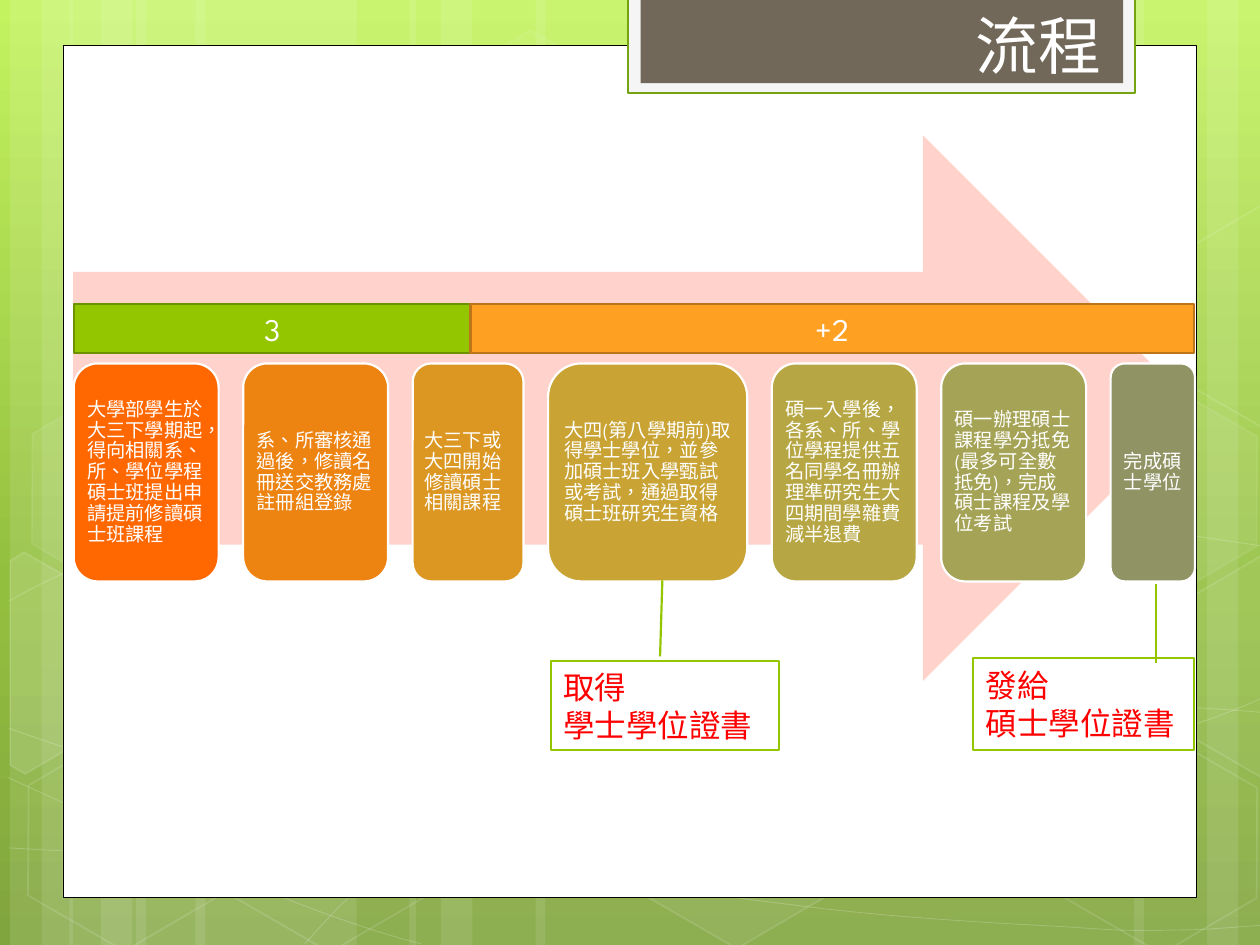
from math import cos, radians, sin

from lxml.etree import SubElement
from pptx import Presentation
from pptx.dml.color import RGBColor
from pptx.enum.lang import MSO_LANGUAGE_ID
from pptx.enum.shapes import MSO_SHAPE
from pptx.enum.text import MSO_ANCHOR, MSO_AUTO_SIZE, PP_ALIGN
from pptx.oxml.ns import qn
from pptx.util import Inches, Pt

COLORS = {
    "sky": "C3F35F", "grass": "93BF3F", "moss": "81A53E",
    "white": "FFFFFF", "black": "000000", "red": "FF0000",
    "frame": "F5F5F5", "frame_edge": "74A510", "tab": "71685A",
    "arrow": "FFD3CC", "green": "94C600", "green_edge": "6D9200",
    "amber": "FEA022", "amber_edge": "BC7619",
    "step1": "FF6700", "step2": "ED8311", "step3": "DB9722", "step4": "C9A333",
    "step5": "B7A744", "step6": "A5A355", "step7": "909465",
}
COLUMNS, ROWS = 100, 75  # grid cells across and down the page
TILT = 30  # degrees the hexagons and shards are turned


class SlideBuilder:
    def __init__(self, deck):
        self.width, self.height = deck.slide_width, deck.slide_height
        self.page = deck.slides.add_slide(deck.slide_layouts[5])

    def cells(self, *lengths):
        """Turn alternating columns and rows into slide lengths."""
        units = (self.width / COLUMNS, self.height / ROWS)
        return [round(length * units[i % 2]) for i, length in enumerate(lengths)]

    def background(self, stops):
        fill = self.page.background.fill
        fill.gradient()
        fill.gradient_angle = 270
        stop_list = self.page.element.find(".//" + qn("a:gsLst"))
        for stop in list(stop_list):
            stop_list.remove(stop)
        for percent, color in stops:
            stop = SubElement(stop_list, qn("a:gs"), pos=str(percent * 1000))
            SubElement(stop, qn("a:srgbClr"), val=COLORS[color])

    def style(self, shape, fill=None, line=None, weight=1.25, fill_alpha=100, line_alpha=100):
        shape.shadow.inherit = False
        properties = shape.element.spPr
        parts = ((shape.fill, fill, fill_alpha, "a:solidFill"),
                 (shape.line.fill, line, line_alpha, "a:ln/a:solidFill"))
        for paint, color, alpha, tags in parts:
            if color is None:
                paint.background()
                continue
            paint.solid()
            paint.fore_color.rgb = RGBColor.from_string(COLORS[color])
            if alpha < 100:
                node = properties.find("/".join(qn(tag) for tag in tags.split("/")))
                SubElement(node[0], qn("a:alpha"), val=str(alpha * 1000))
        if line:
            shape.line.width = Pt(weight)

    def shape(self, kind, place, adjust=(), rotation=0, **look):
        shape = self.page.shapes.add_shape(kind, *self.cells(*place))
        for index, value in enumerate(adjust):
            shape.adjustments[index] = value
        shape.rotation = rotation
        self.style(shape, **look)
        return shape

    def outline(self, points, close, **look):
        spots = [self.cells(*point) for point in points]
        builder = self.page.shapes.build_freeform(*spots[0])
        builder.add_line_segments(spots[1:], close=close)
        shape = builder.convert_to_shape()
        self.style(shape, **look)
        return shape

    def curve(self, points, **look):
        """Draw chained cubic curves: a start, then three points for each."""
        shape = self.outline(points, False, **look)
        route = shape.element.find(".//" + qn("a:pathLst"))[0]
        segments = route.findall(qn("a:lnTo"))
        for first in range(0, len(segments), 3):
            bend = SubElement(route, qn("a:cubicBezTo"))
            for segment in segments[first:first + 3]:
                bend.append(segment[0])
                route.remove(segment)

    def shard(self, points, center, **look):
        """Draw a tilted polygon from the corners it shows on the slide."""
        cosine, sine = cos(radians(TILT)), sin(radians(TILT))
        (middle_x, middle_y), upright = center, []
        for x, y in points:
            dx, dy = x - middle_x, y - middle_y
            upright.append((middle_x + dx * cosine + dy * sine,
                            middle_y + dy * cosine - dx * sine))
        self.outline(upright, True, **look).rotation = TILT

    def text(self, shape, paragraphs, size, color="white", font="League Spartan",
             frame_format=None, para_format=None):
        frame = shape.text_frame
        frame_values = {"word_wrap": True, "vertical_anchor": MSO_ANCHOR.MIDDLE}
        for name, value in (frame_values | (frame_format or {})).items():
            setattr(frame, name, value)
        para_values = {"alignment": PP_ALIGN.LEFT} | (para_format or {})
        font_values = {"size": Pt(size), "name": font,
                       "language_id": MSO_LANGUAGE_ID.TRADITIONAL_CHINESE}
        for index, words in enumerate(paragraphs):
            para = frame.add_paragraph() if index else frame.paragraphs[0]
            for name, value in para_values.items():
                setattr(para, name, value)
            span = para.add_run()
            span.text = words
            for name, value in font_values.items():
                setattr(span.font, name, value)
            span.font.color.rgb = RGBColor.from_string(COLORS[color])

    def title(self, words, place):
        box = self.page.shapes.title
        self.page.shapes._spTree.append(box.element)  # bring in front of the tab
        box.left, box.top, box.width, box.height = self.cells(*place)
        self.text(box, [words], 36, font="Arial", frame_format={
            "word_wrap": False, "vertical_anchor": MSO_ANCHOR.TOP,
            "auto_size": MSO_AUTO_SIZE.SHAPE_TO_FIT_TEXT})


STREAKS = [(10.8, 17.5), (0.8, 5), (3.3, 8.3), (15.5, 17.5), (5.5, 5), (8, 8.3),
           (73.3, 17.5), (95.8, 5), (90, 8.3), (42.5, 30.8), (32.5, 5), (35, 8.3)]
CURVES = [
    [(.7, 67.3), (6.1, 67.6), (11.5, 67.9), (19, 67.8), (26.5, 67.7), (35.8, 67.5), (45.8, 66.5),
     (55.8, 65.5), (70, 63.6), (79.2, 61.7), (88.3, 59.8), (97.7, 56.8), (100.7, 55.1)],
    [(.7, 47.7), (3.6, 46.1), (6.5, 44.6), (12.1, 43.1), (17.8, 41.6), (25.9, 39.4), (34.7, 38.7),
     (43.6, 38), (54.4, 37.9), (65.4, 38.7), (76.4, 39.5), (94.7, 42.6), (100.7, 43.4)],
    [(.6, 61.7), (12.7, 67.2), (24.7, 72.7), (33.4, 74.9)],
    [(.7, 57.8), (3.8, 58.9), (7, 60), (12.8, 61.6), (18.6, 63.1), (27.3, 65.6), (35.7, 67.3),
     (44, 69), (54.5, 70.8), (62.8, 71.8), (71.1, 72.9), (80, 73.3), (85.3, 73.6),
     (90.5, 74), (91.9, 73.8), (94.5, 73.8), (97.1, 73.7), (98.9, 73.5), (100.7, 73.4)],
    [(24.2, 74.9), (26, 72.9), (27.8, 70.9), (30.2, 69.1), (32.6, 67.3), (36, 65.3), (38.8, 63.9),
     (41.6, 62.5), (43.3, 61.9), (47, 60.9), (50.6, 59.9), (57.3, 58.5), (60.8, 57.8),
     (64.4, 57.1), (64.9, 57.1), (68, 56.9), (71.1, 56.6), (76, 56.3), (79.4, 56.2),
     (82.9, 56.1), (88.6, 56.2), (95.3, 56.2), (97.1, 56.3), (98.8, 56.4), (100.6, 56.6)],
]
# Left, top, fill opacity (0 for none), line opacity
HEXAGONS = [(33.4, 3.6, 4, 8), (49.7, 58.9, 6, 12), (1.1, 59.1, 0, 12), (1.4, 31.2, 7, 8),
            (17.4, 59.2, 0, 12), (75.3, 45.3, 10, 12), (83.4, 59.3, 0, 12), (83.4, 31.4, 7, 8)]
RIGHT_SHARD = [(92.6, 48.5), (100.1, 44.1), (100.9, 44.6), (100.9, 61.3), (100.2, 61.7), (92.6, 57.3)]
# Corners, centre, fill opacity
SHARDS = [
    ([(.8, 44.5), (1.9, 43.8), (9.6, 48.2), (9.5, 57), (2, 61.4), (.8, 60.7)], (3.6, 53.5), 10),
    (RIGHT_SHARD, (98.5, 52), 4),
    ([(x, y - 27.8) for x, y in RIGHT_SHARD], (98.5, 24.2), 0),
]
# Width in columns, wording
STEPS = [
    (11.5, "大學部學生於大三下學期起，得向相關系、所、學位學程碩士班提出申請提前修讀碩士班課程"),
    (11.5, "系、所審核通過後，修讀名冊送交教務處註冊組登錄"),
    (8.8, "大三下或大四開始修讀碩士相關課程"),
    (15.8, "大四(第八學期前)取得學士學位，並參加碩士班入學甄試或考試，通過取得碩士班研究生資格"),
    (11.5, "碩一入學後，各系、所、學位學程提供五名同學名冊辦理準研究生大四期間學雜費減半退費"),
    (11.5, "碩一辦理碩士課程學分抵免(最多可全數抵免)，完成碩士課程及學位考試"),
    (6.7, "完成碩士學位"),
]
FLOW_LEFT, STEP_GAP = 5.85, 1.95
CALLOUTS = [
    ((77.25, 52.2, 17.5, 7.3), (-0.8, 0.83, 0.06, 0.83), ["發給", "碩士學位證書"]),
    ((43.7, 52.45, 18.1, 7.1), (-0.9, 0.49, -0.05, 0.48), ["取得", "學士學位證書"]),
]
PHASES = [(FLOW_LEFT, 31.5, "3", "green"), (37.35, 57.4, "+2", "amber")]


def main():
    deck = Presentation()
    deck.slide_width, deck.slide_height = Inches(10), Inches(7.5)
    slide = SlideBuilder(deck)

    # Backdrop: gradient, light streaks, curves and hexagons
    slide.background([(0, "sky"), (62, "grass"), (100, "moss")])
    for left, width in STREAKS:
        slide.shape(MSO_SHAPE.RECTANGLE, (left, 0, width, ROWS), fill="white", fill_alpha=10)
    for points in CURVES:
        slide.curve(points, line="white", weight=0.5, line_alpha=20)
    for left, top, alpha, line_alpha in HEXAGONS:
        slide.shape(MSO_SHAPE.HEXAGON, (left, top, 17.5, 15.2), [0.285], TILT, weight=1,
                    fill="white" if alpha else None, fill_alpha=alpha,
                    line="white", line_alpha=line_alpha)
    for points, center, alpha in SHARDS:
        slide.shard(points, center, fill="white" if alpha else None, fill_alpha=alpha,
                    line="white", weight=1, line_alpha=12)

    # Panel and title tab
    slide.shape(MSO_SHAPE.RECTANGLE, (5, 3.6, 90, 67.65), fill="white", line="black", weight=0.5)
    slide.shape(MSO_SHAPE.RECTANGLE, (49.85, -0.2, 40.2, 7.6), fill="frame", line="frame_edge")
    slide.shape(MSO_SHAPE.RECTANGLE, (50.85, -0.2, 38.3, 6.8), fill="tab")

    # Process arrow and steps
    slide.shape(MSO_SHAPE.RIGHT_ARROW, (5.8, 10.75, 89.1, 43.3), fill="arrow")
    margins = {f"margin_{side}": Inches(0.05) for side in ("left", "top", "right", "bottom")}
    left = FLOW_LEFT
    for number, (width, words) in enumerate(STEPS, 1):
        box = slide.shape(MSO_SHAPE.ROUNDED_RECTANGLE, (left, 28.85, width, 17.3),
                          fill=f"step{number}", line="white")
        align = PP_ALIGN.CENTER if number == len(STEPS) else PP_ALIGN.LEFT
        slide.text(box, [words], 11, frame_format=margins,
                   para_format={"line_spacing": 0.9, "alignment": align})
        left += width + STEP_GAP

    slide.title("流程", (76.45, 0, 12.1, 7.1))

    # Certificates
    for place, adjust, lines in CALLOUTS:
        box = slide.shape(MSO_SHAPE.LINE_CALLOUT_1, place, adjust, fill="white", line="green")
        slide.text(box, lines, 18, "red")

    # Phase bars
    for left, width, words, color in PHASES:
        bar = slide.shape(MSO_SHAPE.RECTANGLE, (left, 24.15, width, 3.9),
                          fill=color, line=f"{color}_edge")
        slide.text(bar, [words], 18, para_format={"alignment": PP_ALIGN.CENTER})

    deck.save("out.pptx")


if __name__ == "__main__":
    main()
